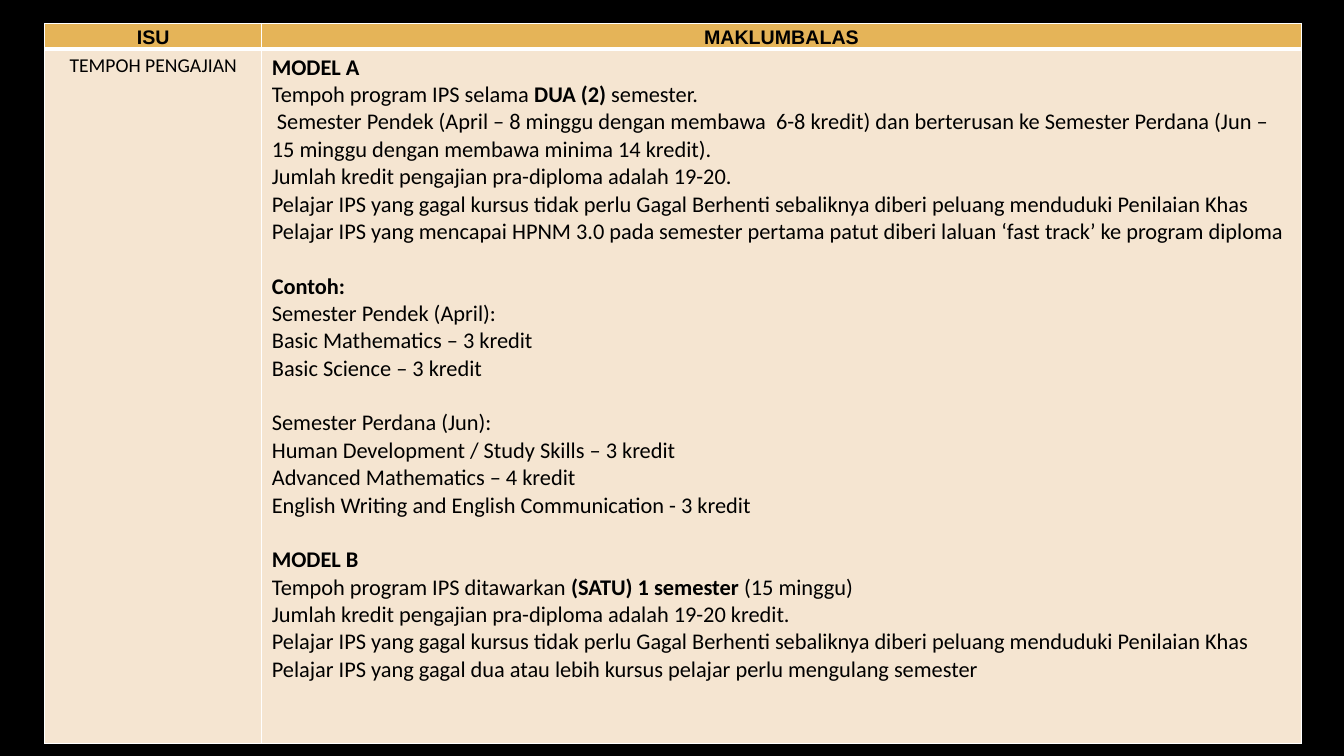
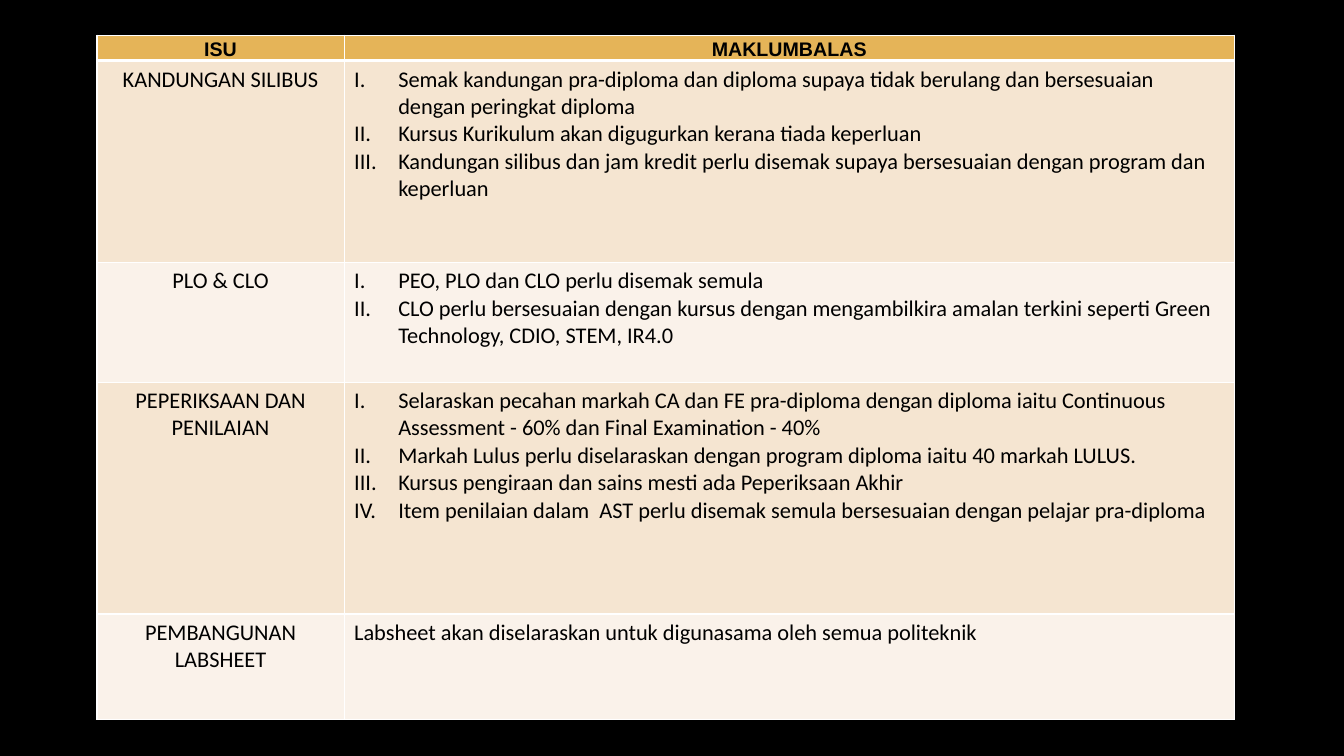
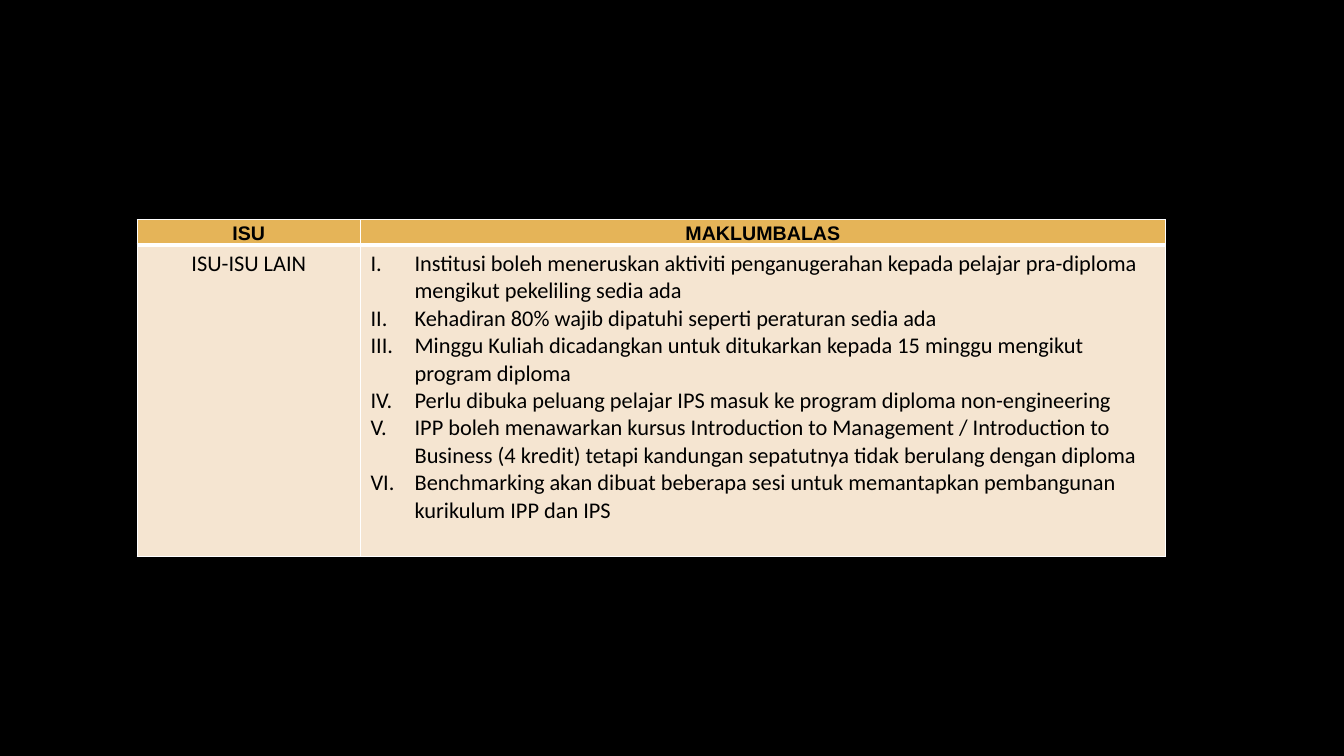
import pptx
import pptx.dml.color
import pptx.enum.text
import pptx.oxml.ns
import pptx.util
from dataclasses import dataclass
from lxml import etree

Pt = pptx.util.Pt
ALIGN = pptx.enum.text.PP_ALIGN


@dataclass(frozen=True)
class Theme:
    backdrop: str = "000000"
    ink: str = "000000"
    rule: str = "FFFFFF"
    header: str = "E5B458"
    bands: tuple = ("F5E5D1", "FAF2EA")
    header_font: str = "Arial"
    body_font: str = "Calibri"
    header_size: float = 14
    body_size: float = 16
    thin: float = 1
    thick: float = 3
    header_height: float = 18
    list_indent: float = 31.5
    section_gap: float = 19.5


class IssueDeck:
    HEADINGS = ("ISU", "MAKLUMBALAS")

    def __init__(self, theme):
        self.theme = theme
        self.deck = pptx.Presentation()
        self.deck.slide_width, self.deck.slide_height = Pt(960), Pt(540)
        self.paint(self.deck.slide_master.background.fill, theme.backdrop)
        self.page = None

    def paint(self, fill, color):
        fill.solid()
        fill.fore_color.rgb = pptx.dml.color.RGBColor.from_string(color)

    def add_page(self):
        self.page = self.deck.slides.add_slide(self.deck.slide_layouts[6])

    # Cell fill and white rules; the borders must precede the fill in the XML
    def style_cell(self, cell, fill, top, bottom):
        properties = cell._tc.get_or_add_tcPr()
        thin = self.theme.thin
        for side, width in (("L", thin), ("R", thin), ("T", top), ("B", bottom)):
            line = etree.SubElement(properties, pptx.oxml.ns.qn(f"a:ln{side}"),
                                    w=str(int(Pt(width))))
            solid = etree.SubElement(line, pptx.oxml.ns.qn("a:solidFill"))
            etree.SubElement(solid, pptx.oxml.ns.qn("a:srgbClr"), val=self.theme.rule)
        self.paint(cell.fill, fill)

    def add_span(self, para, text, font, size, bold):
        span = para.add_run()
        span.text = text
        span.font.name, span.font.size, span.font.bold = font, Pt(size), bold
        span.font.color.rgb = pptx.dml.color.RGBColor.from_string(self.theme.ink)

    # Text between double asterisks is bold
    def add_body_text(self, para, text, size):
        for index, part in enumerate(text.split("**")):
            if part:
                self.add_span(para, part, self.theme.body_font, size, index % 2 == 1)

    def number(self, para):
        properties = para._p.get_or_add_pPr()
        indent = int(Pt(self.theme.list_indent))
        properties.set("marL", str(indent))
        properties.set("indent", str(-indent))
        etree.SubElement(properties, pptx.oxml.ns.qn("a:buAutoNum"), type="romanUcPeriod")

    def header_cell(self, cell, text):
        self.style_cell(cell, self.theme.header, self.theme.thin, self.theme.thick)
        cell.margin_left = cell.margin_right = Pt(5)
        cell.margin_top = cell.margin_bottom = 0
        para = cell.text_frame.paragraphs[0]
        para.alignment, para.line_spacing = ALIGN.CENTER, 1.15
        self.add_span(para, text, self.theme.header_font, self.theme.header_size, True)

    def label_cell(self, cell, text, size):
        para = cell.text_frame.paragraphs[0]
        para.alignment = ALIGN.CENTER
        self.add_body_text(para, text, size)

    # Sections of lines, parted by one line's space
    def reply_cell(self, cell, sections, numbered):
        para = None
        for section in sections:
            for index, text in enumerate(section):
                first = para is None
                para = cell.text_frame.paragraphs[0] if first else cell.text_frame.add_paragraph()
                if index == 0 and not first:
                    para.space_before = Pt(self.theme.section_gap)
                if numbered:
                    self.number(para)
                self.add_body_text(para, text, self.theme.body_size)

    # Each row is (label, height, sections, numbered)
    def add_issue_table(self, left, top, widths, rows, label_size=None):
        heights = [self.theme.header_height] + [row[1] for row in rows]
        frame = self.page.shapes.add_table(len(heights), len(widths), Pt(left), Pt(top),
                                           Pt(sum(widths)), Pt(sum(heights)))
        table = frame.table
        table.first_row = table.horz_banding = False
        for column, width in zip(table.columns, widths):
            column.width = Pt(width)
        for row, height in zip(table.rows, heights):
            row.height = Pt(height)
        for column, heading in enumerate(self.HEADINGS):
            self.header_cell(table.cell(0, column), heading)
        for index, (label, _, sections, numbered) in enumerate(rows):
            cells = [table.cell(index + 1, column) for column in range(2)]
            upper = self.theme.thin if index else self.theme.thick
            for cell in cells:
                self.style_cell(cell, self.theme.bands[index % 2], upper, self.theme.thin)
            self.label_cell(cells[0], label, label_size or self.theme.body_size)
            self.reply_cell(cells[1], sections, numbered)


# Lines shared by both study models
SPECIAL_ASSESSMENT = ("Pelajar IPS yang gagal kursus tidak perlu Gagal Berhenti sebaliknya "
                      "diberi peluang menduduki Penilaian Khas")

STUDY_PERIOD = [
    ["**MODEL A**",
     "Tempoh program IPS selama **DUA (2)** semester.",
     " Semester Pendek (April – 8 minggu dengan membawa  6-8 kredit) dan berterusan ke "
     "Semester Perdana (Jun – 15 minggu dengan membawa minima 14 kredit).",
     "Jumlah kredit pengajian pra-diploma adalah 19-20.",
     SPECIAL_ASSESSMENT,
     "Pelajar IPS yang mencapai HPNM 3.0 pada semester pertama patut diberi laluan "
     "‘fast track’ ke program diploma"],
    ["**Contoh:**",
     "Semester Pendek (April):",
     "Basic Mathematics – 3 kredit",
     "Basic Science – 3 kredit"],
    ["Semester Perdana (Jun):",
     "Human Development / Study Skills – 3 kredit",
     "Advanced Mathematics – 4 kredit",
     "English Writing and English Communication - 3 kredit"],
    ["**MODEL B**",
     "Tempoh program IPS ditawarkan **(SATU) 1 semester** (15 minggu)",
     "Jumlah kredit pengajian pra-diploma adalah 19-20 kredit.",
     SPECIAL_ASSESSMENT,
     "Pelajar IPS yang gagal dua atau lebih kursus pelajar perlu mengulang semester"],
]

SYLLABUS = [[
    "Semak kandungan pra-diploma dan diploma supaya tidak berulang dan bersesuaian "
    "dengan peringkat diploma",
    "Kursus Kurikulum akan digugurkan kerana tiada keperluan",
    "Kandungan silibus dan jam kredit perlu disemak supaya bersesuaian dengan program "
    "dan keperluan",
]]

OUTCOMES = [[
    "PEO, PLO dan CLO perlu disemak semula",
    "CLO perlu bersesuaian dengan kursus dengan mengambilkira amalan terkini seperti "
    "Green Technology, CDIO, STEM, IR4.0",
]]

ASSESSMENT = [[
    "Selaraskan pecahan markah CA dan FE pra-diploma dengan diploma iaitu Continuous "
    "Assessment - 60% dan Final Examination - 40%",
    "Markah Lulus perlu diselaraskan dengan program diploma iaitu 40 markah LULUS.",
    "Kursus pengiraan dan sains mesti ada Peperiksaan Akhir",
    "Item penilaian dalam  AST perlu disemak semula bersesuaian dengan pelajar pra-diploma",
]]

LABSHEET = [["Labsheet akan diselaraskan untuk digunasama oleh semua politeknik"]]

OTHER_ISSUES = [[
    "Institusi boleh meneruskan aktiviti penganugerahan kepada pelajar pra-diploma "
    "mengikut pekeliling sedia ada",
    "Kehadiran 80% wajib dipatuhi seperti peraturan sedia ada",
    "Minggu Kuliah dicadangkan untuk ditukarkan kepada 15 minggu mengikut program diploma",
    "Perlu dibuka peluang pelajar IPS masuk ke program diploma non-engineering",
    "IPP boleh menawarkan kursus Introduction to Management / Introduction to Business "
    "(4 kredit) tetapi kandungan sepatutnya tidak berulang dengan diploma",
    "Benchmarking akan dibuat beberapa sesi untuk memantapkan pembangunan kurikulum "
    "IPP dan IPS",
]]


def main():
    issues = IssueDeck(Theme())

    # Study period
    issues.add_page()
    issues.add_issue_table(32, 16.7, (155, 742.5),
                           [("TEMPOH PENGAJIAN", 496, STUDY_PERIOD, False)],
                           label_size=issues.theme.header_size)

    # Syllabus, outcomes, assessment and labsheets
    issues.add_page()
    issues.add_issue_table(69.3, 25.2, (176.5, 636), [
        ("KANDUNGAN SILIBUS", 144, SYLLABUS, True),
        ("PLO & CLO", 85.7, OUTCOMES, True),
        ("PEPERIKSAAN DAN PENILAIAN", 165.6, ASSESSMENT, True),
        ("PEMBANGUNAN LABSHEET", 75.6, LABSHEET, False),
    ])

    # Other issues
    issues.add_page()
    issues.add_issue_table(98, 157, (159.5, 575),
                           [("ISU-ISU LAIN", 222.5, OTHER_ISSUES, True)])

    issues.deck.save("out.pptx")


if __name__ == "__main__":
    main()
